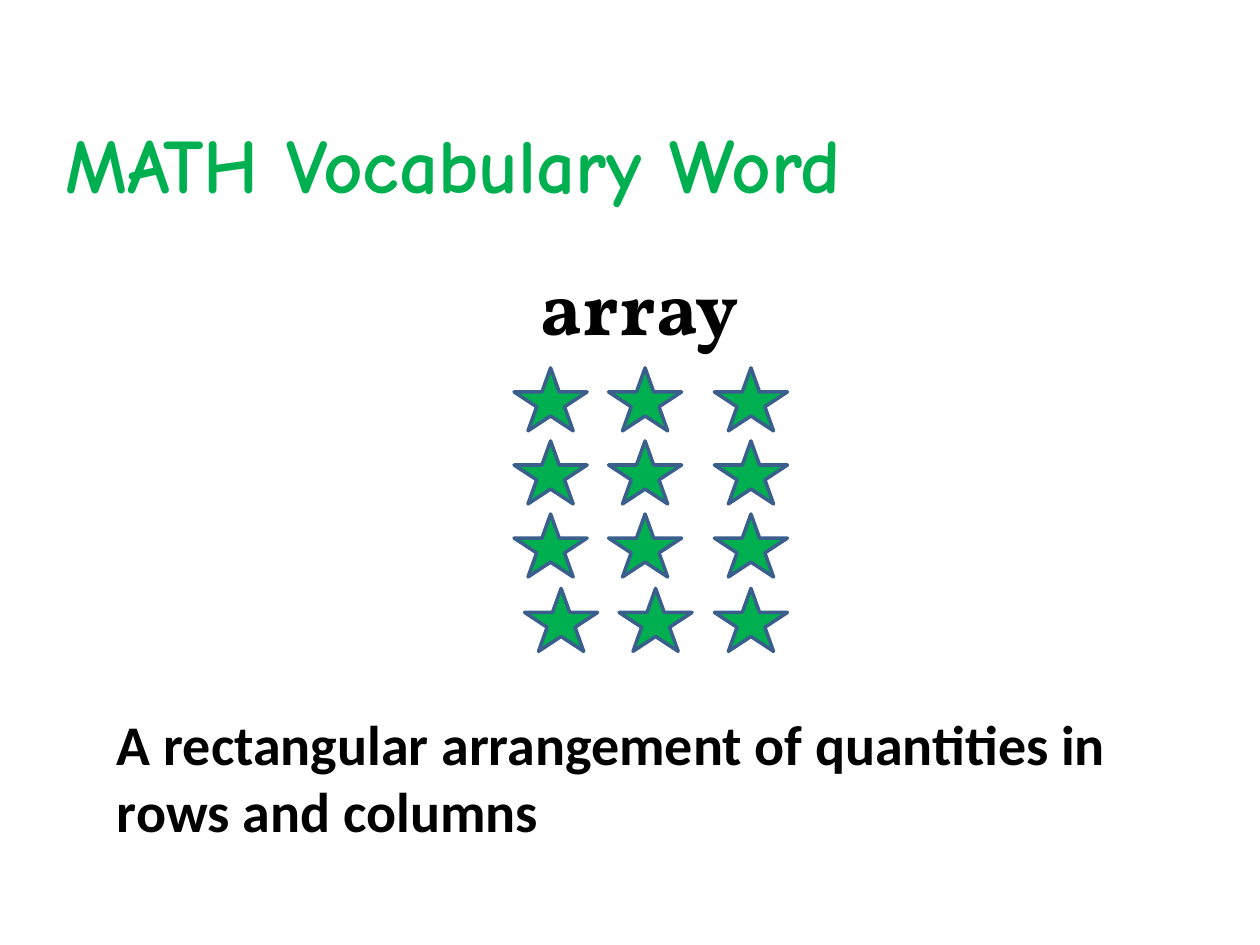
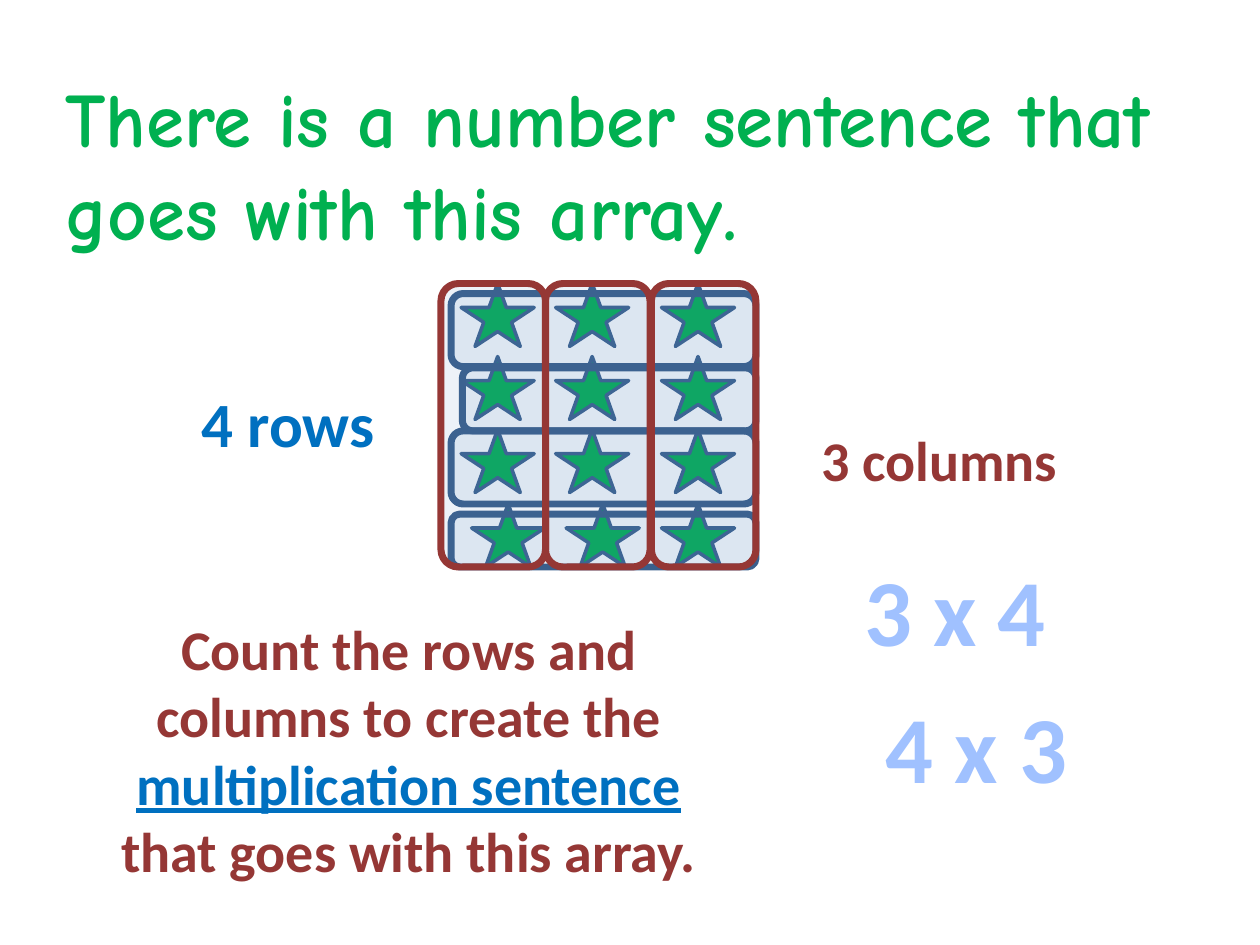
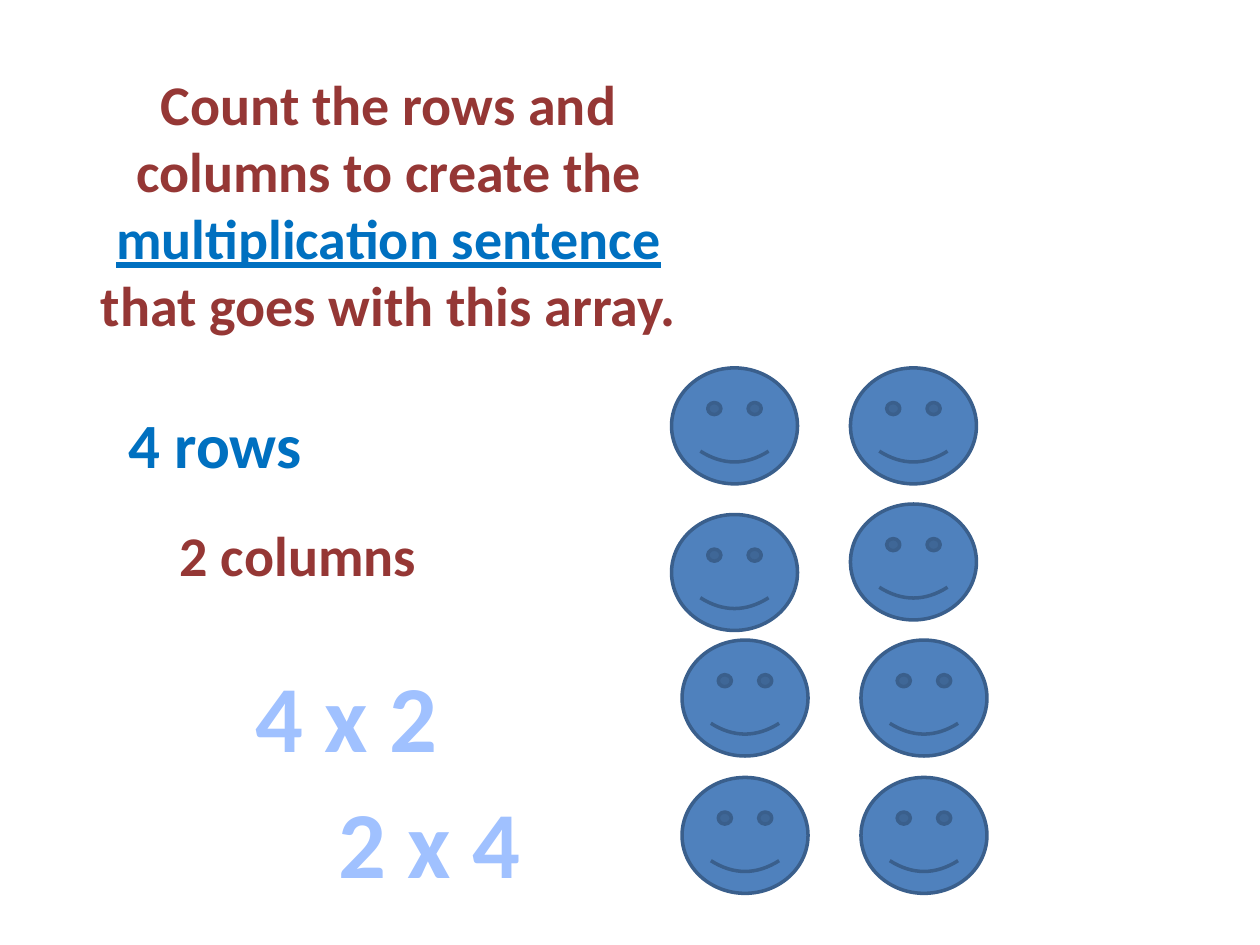
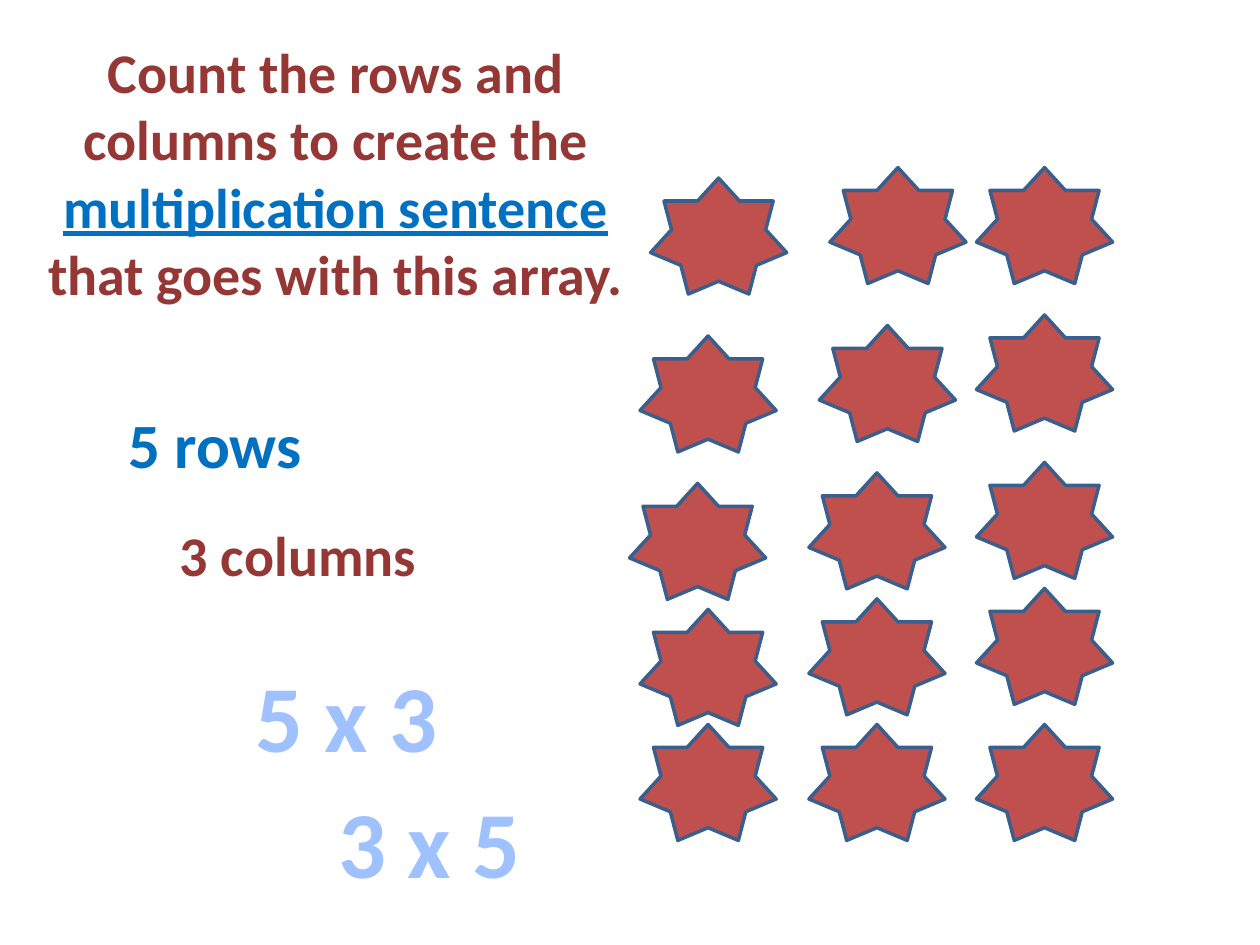
from dataclasses import dataclass, field
from typing import Any

import lxml.etree
import pptx
import pptx.dml.color
import pptx.enum.shapes
import pptx.enum.text
import pptx.oxml.ns
import pptx.slide
import pptx.util

Inches = pptx.util.Inches
Pt = pptx.util.Pt
MSO = pptx.enum.shapes.MSO_SHAPE
ALIGN = pptx.enum.text.PP_ALIGN
ANCHOR = pptx.enum.text.MSO_ANCHOR
FIT = pptx.enum.text.MSO_AUTO_SIZE
qn = pptx.oxml.ns.qn

# Shared look
COLORS = {
    "green": "00B050", "outline": "3A5F8C", "black": "000000",
    "maroon": "953735", "blue": "0070C0", "accent": "4F81BD",
    "red": "C0504D", "glow_edge": "467AB8",
}
GLOW_STOPS = [(0, "BFD3F9"), (9, "A0C1FF"), (50, "003D85"), (79, "A0C1FF"), (100, "BFD3F9")]
STYLES = {
    "title": {"name": "Comic Neue", "size": Pt(44), "bold": True},
    "word": {"name": "Vollkorn", "size": Pt(44), "bold": True},
    "body": {"name": "Calibri", "size": Pt(32), "bold": True},
    "link": {"name": "Calibri", "size": Pt(32), "bold": True, "underline": True},
    "rows": {"name": "Calibri", "size": Pt(36), "bold": True},
    "product": {"name": "Calibri", "size": Pt(54), "bold": True},
}
TITLE_ONLY, BLANK = 5, 6
NUDGE = 1 / 12  # one step of the drawing grid, in inches


@dataclass
class Run:
    text: str
    style: str = "body"
    color: str = "maroon"


@dataclass
class Label:
    runs: list[Run]
    box: tuple[float, float, float, float]
    align: Any = ALIGN.LEFT
    wrap: bool = True


@dataclass
class Array:
    """Cells at columns x tops; nudges shift single cells by grid steps."""
    kind: Any
    color: str
    size: tuple[float, float]
    columns: list[float]
    tops: list[float]
    nudges: dict[tuple[int, int], tuple[int, int]] = field(default_factory=dict)


@dataclass
class Exercise:
    array: Array
    prompt_at: tuple[float, float]
    rows: int
    columns: int


def rgb(name: str) -> pptx.dml.color.RGBColor:
    return pptx.dml.color.RGBColor.from_string(COLORS[name])


def place(sp: Any, box: tuple[float, float, float, float]) -> None:
    sp.left, sp.top, sp.width, sp.height = (Inches(v) for v in box)


# Text
def add_run(p: Any, run: Run) -> None:
    r = p.add_run()
    r.text = run.text
    for name, value in STYLES[run.style].items():
        setattr(r.font, name, value)
    if run.style == "product":
        add_glow(r)
    else:
        r.font.color.rgb = rgb(run.color)


def add_glow(r: Any) -> None:
    """Give a run a thin outline and a vertical gradient fill."""
    rpr = r.font._element
    ln = lxml.etree.Element(qn("a:ln"), w=str(Pt(0.83)))
    solid = lxml.etree.SubElement(ln, qn("a:solidFill"))
    lxml.etree.SubElement(solid, qn("a:srgbClr"), val=COLORS["glow_edge"])
    grad = lxml.etree.Element(qn("a:gradFill"))
    stops = lxml.etree.SubElement(grad, qn("a:gsLst"))
    for percent, color in GLOW_STOPS:
        gs = lxml.etree.SubElement(stops, qn("a:gs"), pos=str(percent * 1000))
        lxml.etree.SubElement(gs, qn("a:srgbClr"), val=color)
    lxml.etree.SubElement(grad, qn("a:lin"), ang="5400000")
    rpr.insert(0, ln)
    rpr.insert(1, grad)


def add_label(s: pptx.slide.Slide, label: Label) -> None:
    tf = s.shapes.add_textbox(*(Inches(v) for v in label.box)).text_frame
    tf.word_wrap = label.wrap
    tf.auto_size = FIT.SHAPE_TO_FIT_TEXT
    p = tf.paragraphs[0]
    p.alignment = label.align
    for run in label.runs:
        add_run(p, run)


def set_title(s: pptx.slide.Slide, text: str) -> None:
    sp = s.shapes.title
    place(sp, (0.42, 0.67, 9, 1.25))
    tf = sp.text_frame
    for name, value in {"word_wrap": True, "auto_size": FIT.NONE,
                        "vertical_anchor": ANCHOR.MIDDLE}.items():
        setattr(tf, name, value)
    p = tf.paragraphs[0]
    p.alignment = ALIGN.LEFT
    add_run(p, Run(text, "title", "green"))


def add_prompt(s: pptx.slide.Slide, left: float, top: float) -> None:
    runs = [Run("Count the rows and columns to create the "),
            Run("multiplication sentence ", "link", "blue"),
            Run("that goes with this array.")]
    add_label(s, Label(runs, (left, top, 5.33, 2.26), ALIGN.CENTER))


def add_counts(s: pptx.slide.Slide, rows: int, columns: int,
               rows_at: tuple[float, float], columns_at: tuple[float, float]) -> None:
    add_label(s, Label([Run(f"{rows} rows", "rows", "blue")], (*rows_at, 1.58, 0.71)))
    add_label(s, Label([Run(f"{columns} columns")], (*columns_at, 2.75, 0.64)))


def add_product(s: pptx.slide.Slide, a: int, b: int, at: tuple[float, float]) -> None:
    add_label(s, Label([Run(f"{a} x {b}", "product")], (*at, 1.66, 1.01), ALIGN.CENTER, False))


# Shapes
def add_figure(shapes: Any, kind: Any, box: tuple[float, float, float, float],
               fill: str, line: str = "outline", width: float = 2) -> Any:
    sp = shapes.add_shape(kind, *(Inches(v) for v in box))
    sp.shadow.inherit = False
    sp.fill.solid()
    sp.fill.fore_color.rgb = rgb(fill)
    sp.line.color.rgb = rgb(line)
    sp.line.width = Pt(width)
    return sp


def add_array(shapes: Any, array: Array, dx: float = 0, dy: float = 0) -> None:
    for row, top in enumerate(array.tops):
        for col, left in enumerate(array.columns):
            right, down = array.nudges.get((row, col), (0, 0))
            box = (left + dx + right * NUDGE, top + dy + down * NUDGE, *array.size)
            add_figure(shapes, array.kind, box, array.color)


def add_frame(s: pptx.slide.Slide, box: tuple[float, float, float, float], line: str) -> None:
    sp = add_figure(s.shapes, MSO.ROUNDED_RECTANGLE, box, "accent", line, 4)
    color = sp.fill._xPr.find(qn("a:solidFill"))[0]
    lxml.etree.SubElement(color, qn("a:alpha"), val="10000")


# Content
STARS = Array(MSO.STAR_5_POINT, "green", (0.58, 0.5),
              [4.08, 4.83, 5.67], [2.92, 3.5, 4.08, 4.67],
              {(3, 0): (1, 0), (3, 1): (1, 0)})
SMILEYS = Array(MSO.SMILEY_FACE, "accent", (1, 0.92),
                [5.33, 6.75], [2.92, 4, 5.08, 6.17],
                {(1, 0): (0, 1), (2, 0): (1, 0), (2, 1): (1, 0),
                 (3, 0): (1, 0), (3, 1): (1, 0)})
BURSTS = Array(MSO.STAR_7_POINT, "red", (1.08, 0.92),
               [5.08, 6.42, 7.75], [1.33, 2.5, 3.67, 4.67, 5.75],
               {(0, 0): (1, 1), (0, 1): (2, 0), (1, 0): (0, 2), (1, 1): (1, 1),
                (2, 0): (-1, 2), (2, 1): (0, 1), (3, 0): (0, 2), (3, 1): (0, 1)})
ROW_FRAMES = [(3.58, 2.33, 2.42, 0.58), (3.67, 2.92, 2.33, 0.5),
              (3.58, 3.42, 2.42, 0.58), (3.58, 4.08, 2.42, 0.42)]
COLUMN_FRAMES = [(left, 2.25, 0.83, 2.25) for left in (5.17, 4.33, 3.5)]
EXERCISES = [Exercise(SMILEYS, (0.42, 0.5), 4, 2), Exercise(BURSTS, (0, 0.25), 5, 3)]


def build_word(s: pptx.slide.Slide) -> None:
    set_title(s, "MATH Vocabulary Word")
    add_array(s.shapes, STARS)
    add_label(s, Label([Run("array", "word", "black")], (4.08, 2, 2, 0.84), ALIGN.CENTER))
    meaning = "A rectangular arrangement of quantities in rows and columns"
    add_label(s, Label([Run(meaning, color="black")], (0.83, 5.58, 8.75, 1.18)))


def build_example(s: pptx.slide.Slide) -> None:
    set_title(s, "There is a number sentence that goes with this array.")
    add_array(s.shapes.add_group_shape().shapes, STARS, -0.42, -0.67)
    add_prompt(s, 0.58, 4.83)
    add_counts(s, 4, 3, (1.5, 3), (6.42, 3.33))
    for line, boxes in (("outline", ROW_FRAMES), ("maroon", COLUMN_FRAMES)):
        for box in boxes:
            add_frame(s, box, line)
    add_product(s, 3, 4, (6.75, 4.33))
    add_product(s, 4, 3, (6.92, 5.42))


def build_exercise(s: pptx.slide.Slide, ex: Exercise) -> None:
    add_prompt(s, *ex.prompt_at)
    add_array(s.shapes, ex.array)
    add_counts(s, ex.rows, ex.columns, (0.92, 3.17), (1.33, 4.08))
    add_product(s, ex.rows, ex.columns, (1.92, 5.17))
    add_product(s, ex.columns, ex.rows, (2.58, 6.17))


def main() -> None:
    prs = pptx.Presentation()
    prs.slide_width, prs.slide_height = Inches(10), Inches(7.5)
    for build in (build_word, build_example):
        build(prs.slides.add_slide(prs.slide_layouts[TITLE_ONLY]))
    for ex in EXERCISES:
        build_exercise(prs.slides.add_slide(prs.slide_layouts[BLANK]), ex)
    prs.save("out.pptx")


if __name__ == "__main__":
    main()
